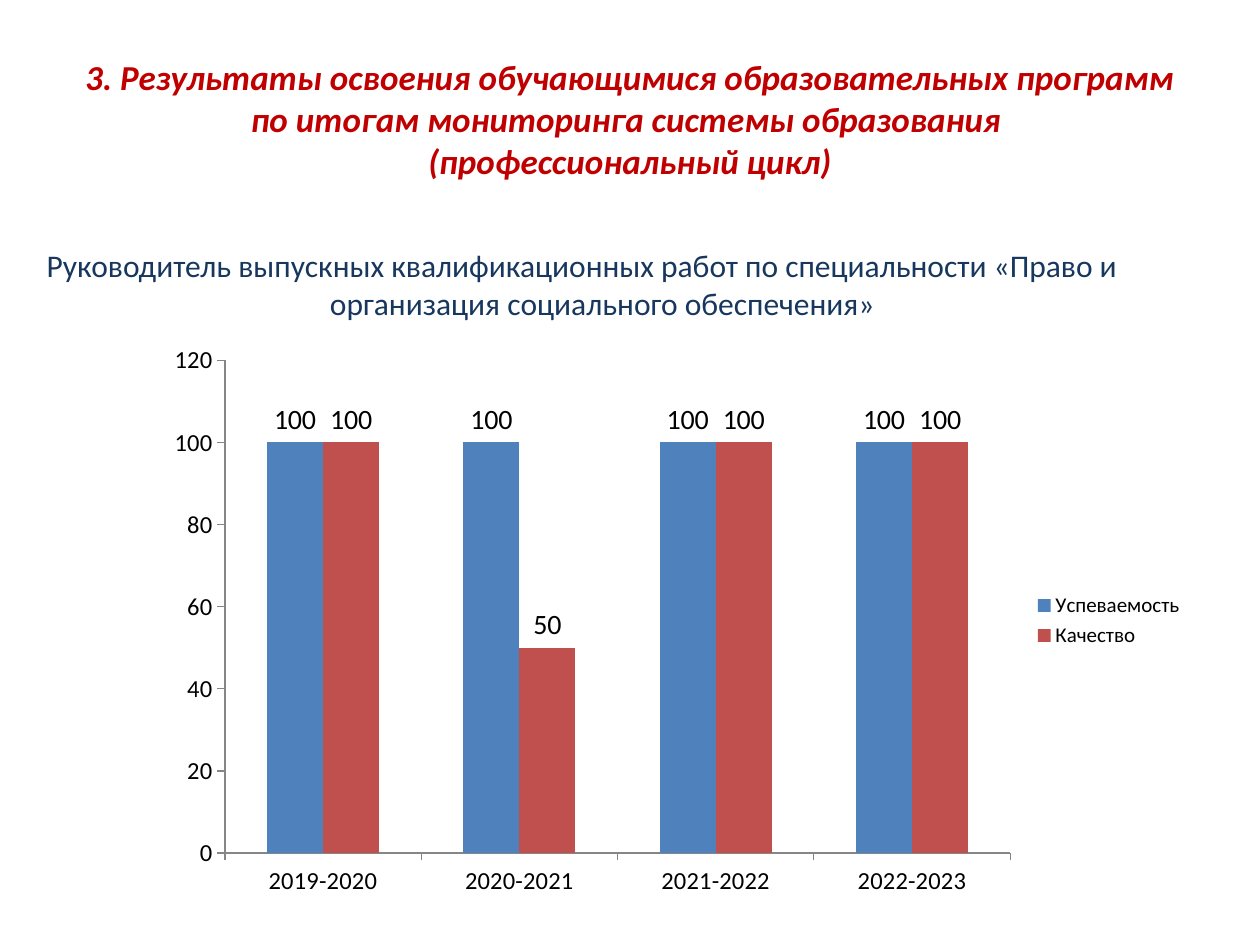
from pptx import Presentation
from pptx.chart.data import CategoryChartData as ChartData
from pptx.dml.color import RGBColor as Rgb
from pptx.enum.chart import XL_CHART_TYPE as Kind, XL_LABEL_POSITION as Spot
from pptx.enum.chart import XL_LEGEND_POSITION as Side, XL_TICK_MARK as Tick
from pptx.enum.text import MSO_ANCHOR as Anchor, PP_ALIGN as Align
from pptx.util import Inches, Pt

THEME = {
    "face": "Calibri",
    "ink": "000000", "red": "C00000", "navy": "17375E", "axis": "868686",
    "bars": ["4F81BD", "C0504D"],
    "title": 20, "body": 18, "label": 16, "tick": 14, "key": 12,
}

deck = Presentation()
deck.slide_width, deck.slide_height = Inches(10), Inches(7.5)
slide = deck.slides.add_slide(deck.slide_layouts[6])


def area(left, top, wide, high):
    """Turn percentages of the slide into a position and size."""
    sizes = (deck.slide_width, deck.slide_height) * 2
    return [int(size * part / 100) for size, part in zip(sizes, (left, top, wide, high))]


def style(font, size, color, **form):
    look = {"name": THEME["face"], "size": Pt(THEME[size]), **form}
    for key, value in look.items():
        setattr(font, key, value)
    font.color.rgb = Rgb.from_string(THEME[color])


# Chart
data = ChartData(number_format="General")
data.categories = ["2019-2020", "2020-2021", "2021-2022", "2022-2023"]
data.add_series("Успеваемость", [100, 100, 100, 100])
data.add_series("Качество", [100, 50, 100, 100])
chart = slide.shapes.add_chart(
    Kind.COLUMN_CLUSTERED, *area(12.2, 35.33, 82.8, 60.67), data).chart
style(chart.font, "body", "ink")
chart.has_title = False
chart.has_legend = True
for key, value in {"position": Side.RIGHT, "include_in_layout": False}.items():
    setattr(chart.legend, key, value)
style(chart.legend.font, "key", "ink")

for axis in (chart.category_axis, chart.value_axis):
    axis.has_major_gridlines = False
    axis.major_tick_mark = Tick.OUTSIDE
    axis.format.line.color.rgb = Rgb.from_string(THEME["axis"])
    style(axis.tick_labels.font, "tick", "ink")
scale = {"minimum_scale": 0, "maximum_scale": 120, "major_unit": 20}
for key, value in scale.items():
    setattr(chart.value_axis, key, value)

plot = chart.plots[0]
for key, value in {"gap_width": 150, "overlap": 0, "vary_by_categories": False}.items():
    setattr(plot, key, value)
for bar, color in zip(plot.series, THEME["bars"]):
    bar.format.fill.solid()
    bar.format.fill.fore_color.rgb = Rgb.from_string(color)
    bar.data_labels.show_value = True
    bar.data_labels.position = Spot.OUTSIDE_END
    style(bar.data_labels.font, "label", "ink")

# Title and subtitle
texts = [
    ("3. Результаты освоения обучающимися образовательных программ "
     "по итогам мониторинга системы образования \v(профессиональный цикл)",
     (5, 4.2, 90, 16.67), Anchor.MIDDLE, 0, "title", "red",
     {"bold": True, "italic": True}),
    ("Руководитель выпускных квалификационных работ по специальности "
     "«Право и организация социального обеспечения» ",
     (1.2, 25.4, 90, 68.53), Anchor.TOP, 0.38, "body", "navy", {}),
]
for words, place, anchor, hang, size, color, form in texts:
    frame = slide.shapes.add_textbox(*area(*place)).text_frame
    frame.word_wrap = True
    frame.vertical_anchor = anchor
    para = frame.paragraphs[0]
    para.text = words
    para.alignment = Align.CENTER
    if hang:
        props = para._p.get_or_add_pPr()
        props.set("marL", str(Inches(hang)))
        props.set("indent", str(-Inches(hang)))
    for run in para.runs:
        style(run.font, size, color, **form)

deck.save("out.pptx")
